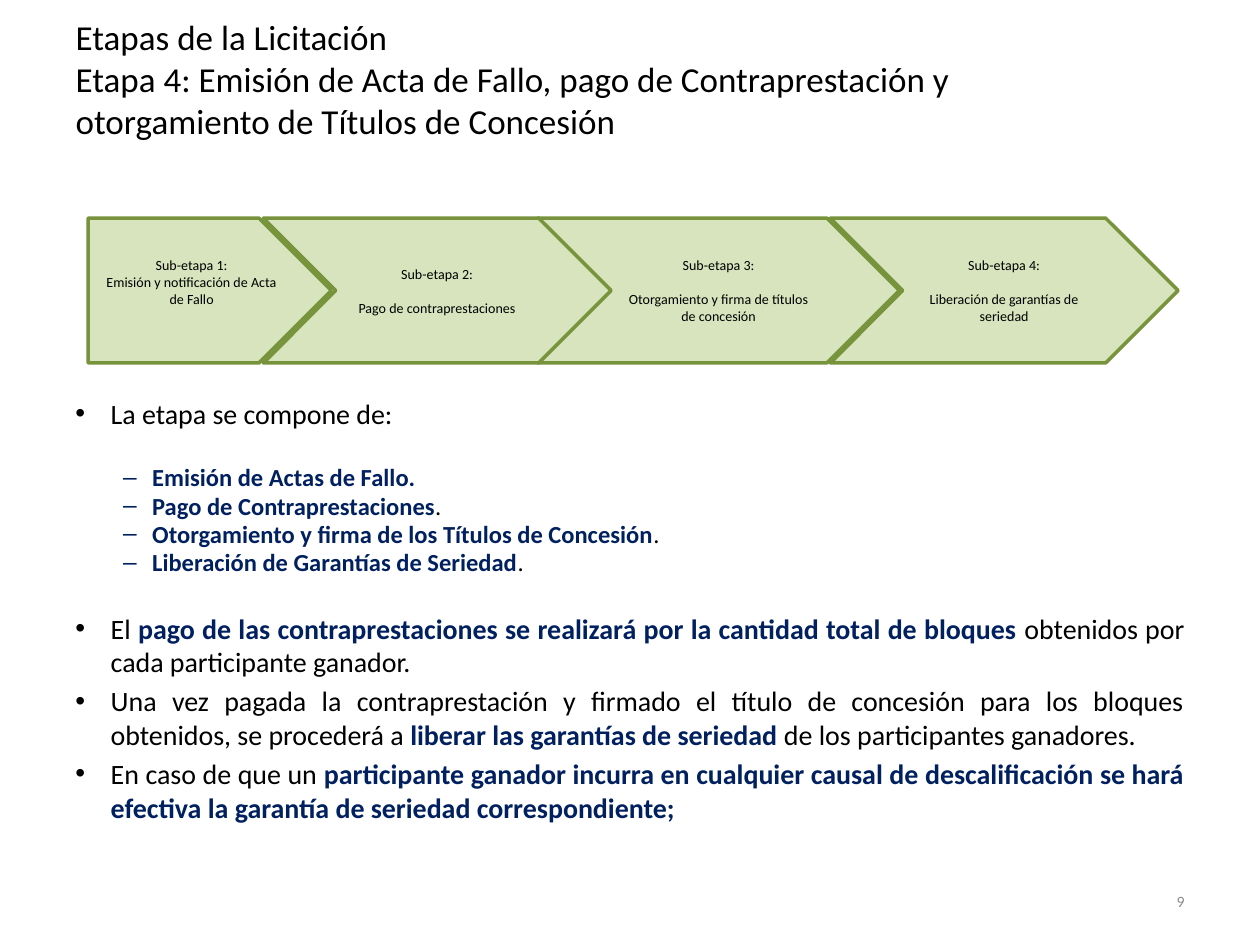
from dataclasses import dataclass

from lxml import etree
from pptx import Presentation
from pptx.dml.color import RGBColor
from pptx.enum.shapes import MSO_SHAPE
from pptx.enum.text import MSO_ANCHOR, MSO_AUTO_SIZE, PP_ALIGN
from pptx.oxml.ns import qn
from pptx.util import Pt

PENTAGON, CHEVRON = MSO_SHAPE.PENTAGON, MSO_SHAPE.CHEVRON
LEFT, CENTER, RIGHT, JUSTIFY = (
    PP_ALIGN.LEFT, PP_ALIGN.CENTER, PP_ALIGN.RIGHT, PP_ALIGN.JUSTIFY)
TOP, MIDDLE = MSO_ANCHOR.TOP, MSO_ANCHOR.MIDDLE
NO_FIT = MSO_AUTO_SIZE.NONE

FONT = "Calibri"
COLORS = {"text": "000000", "emphasis": "002060", "number": "8C8C8C",
          "stage": "D7E4BD", "outline": "77933C"}
MARGIN = 36
STAGE_TOP, STAGE_HEIGHT = 124.6, 82.8
STAGE_GAP = 9.8  # one empty line of stage text


@dataclass
class Stage:
    number: int
    label: str
    left: float
    width: float
    preset: int = CHEVRON
    gap: float = STAGE_GAP
    bottom_inset: float = 3.6


@dataclass
class Point:
    text: str  # asterisks enclose emphasised words
    before: float
    spacing: float = 1.0
    size: float = 16
    bullet: str = "•"
    margin: float = 20.2
    hanging: float = 20.2
    level: int = 0


def sub_point(text: str, before: float = 2.8) -> Point:
    return Point(text, before, 0.8, 14, "–", 43.9, 16.6, 1)


# Back to front
STAGES = [
    Stage(1, "Emisión y notificación de Acta de Fallo", 50.4, 139, PENTAGON,
          gap=0, bottom_inset=3.6 + STAGE_GAP),
    Stage(3, "Otorgamiento y firma de títulos de concesión", 307.4, 206.6),
    Stage(4, "Liberación de garantías de seriedad", 474.5, 198.7),
    Stage(2, "Pago de contraprestaciones", 150.5, 198.7),
]

POINTS = [
    Point("La etapa se compone de:", 0, 0.8),
    sub_point("*Emisión de Actas de Fallo.*", 21.6),
    sub_point("*Pago de Contraprestaciones*."),
    sub_point("*Otorgamiento y firma de los Títulos de Concesión*."),
    sub_point("*Liberación de Garantías de Seriedad*."),
    Point("El *pago de las contraprestaciones se realizará por la cantidad "
          "total de bloques* obtenidos por cada participante ganador.", 19.7),
    Point("Una vez pagada la contraprestación y firmado el título de concesión "
          "para los bloques obtenidos, se procederá a *liberar las garantías "
          "de seriedad* de los participantes ganadores.", 3.2),
    Point("En caso de que un *participante ganador incurra en cualquier causal "
          "de descalificación se hará efectiva la garantía de seriedad "
          "correspondiente;*", 3.2),
]


def rgb(name: str) -> RGBColor:
    return RGBColor.from_string(COLORS[name])


def write(paragraph, text: str, *, size: float, color: str = "text",
          align=LEFT, before: float = 0, spacing: float = 1.0) -> None:
    """Fill a paragraph; asterisks toggle emphasis, newlines break lines."""
    paragraph.alignment = align
    paragraph.space_before = Pt(before)
    paragraph.line_spacing = spacing
    for part, words in enumerate(text.split("*")):
        emphasised = part % 2 == 1
        for row, line in enumerate(words.split("\n")):
            if row:
                paragraph.add_line_break()
            if not line:
                continue
            run = paragraph.add_run()
            run.text = line
            run.font.name = FONT
            run.font.size = Pt(size)
            run.font.bold = emphasised
            run.font.color.rgb = rgb("emphasis" if emphasised else color)


def prepare_frame(shape, anchor):
    frame = shape.text_frame
    frame.word_wrap = True
    frame.auto_size = NO_FIT
    frame.vertical_anchor = anchor
    return frame


def next_paragraph(frame, index: int):
    return frame.add_paragraph() if index else frame.paragraphs[0]


def add_bullet(paragraph, point: Point) -> None:
    paragraph.level = point.level
    properties = paragraph._p.get_or_add_pPr()
    properties.set("marL", str(Pt(point.margin)))
    properties.set("indent", str(-Pt(point.hanging)))
    etree.SubElement(properties, qn("a:buFont"), typeface="Arial")
    etree.SubElement(properties, qn("a:buChar"), char=point.bullet)


def add_stage(slide, stage: Stage) -> None:
    arrow = slide.shapes.add_shape(
        stage.preset, Pt(stage.left), Pt(STAGE_TOP), Pt(stage.width), Pt(STAGE_HEIGHT))
    arrow.shadow.inherit = False
    arrow.fill.solid()
    arrow.fill.fore_color.rgb = rgb("stage")
    arrow.line.color.rgb = rgb("outline")
    arrow.line.width = Pt(2)
    frame = prepare_frame(arrow, MIDDLE)
    frame.margin_bottom = Pt(stage.bottom_inset)
    write(frame.paragraphs[0], f"Sub-etapa {stage.number}:", size=8, align=CENTER)
    write(frame.add_paragraph(), stage.label, size=8, align=CENTER, before=stage.gap)


def add_points(slide, points: list[Point]) -> None:
    box = slide.shapes.add_textbox(Pt(MARGIN), Pt(226.8), Pt(648), Pt(288.7))
    frame = prepare_frame(box, TOP)
    for index, point in enumerate(points):
        paragraph = next_paragraph(frame, index)
        add_bullet(paragraph, point)
        write(paragraph, point.text, size=point.size, align=JUSTIFY,
              before=point.before, spacing=point.spacing)


def main() -> None:
    deck = Presentation()
    deck.slide_width, deck.slide_height = Pt(720), Pt(540)
    slide = deck.slides.add_slide(deck.slide_layouts[5])

    # Title
    title = slide.shapes.title
    title.left, title.top, title.width, title.height = Pt(MARGIN), Pt(0), Pt(565.2), Pt(90)
    write(prepare_frame(title, MIDDLE).paragraphs[0],
          "Etapas de la Licitación\nEtapa 4: Emisión de Acta de Fallo, pago de "
          "Contraprestación y otorgamiento de Títulos de Concesión", size=20)

    # Explanation
    add_points(slide, POINTS)

    # Page number
    page = slide.shapes.add_textbox(Pt(516.2), Pt(500.4), Pt(167.8), Pt(28.8))
    write(prepare_frame(page, MIDDLE).paragraphs[0], "9", size=9,
          color="number", align=RIGHT)

    # Process arrows
    for stage in STAGES:
        add_stage(slide, stage)

    deck.save("out.pptx")


if __name__ == "__main__":
    main()
